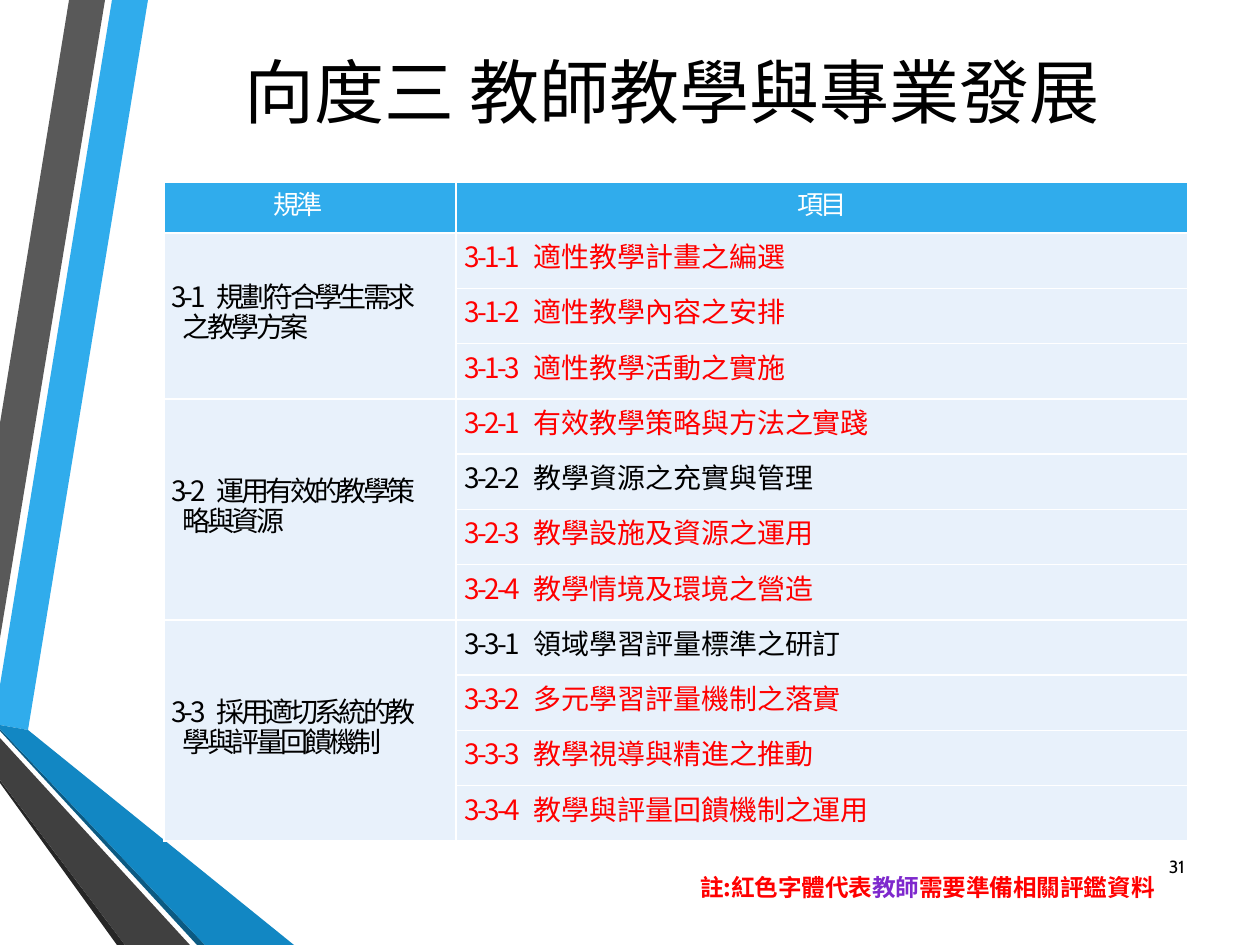
from typing import NamedTuple

from pptx import Presentation
from pptx.dml.color import RGBColor
from pptx.enum.text import MSO_ANCHOR as Anchor, PP_ALIGN as Align
from pptx.util import Emu, Pt

SCALE = 914400 / 126  # EMU per px
CJK = "Noto Sans CJK SC"
LATIN = "Cabin"
BLACK, WHITE, RED, PURPLE = "000000", "FFFFFF", "FF0000", "7E28CD"
HEADER_BLUE, PALE_BLUE = "30ACEC", "E8F1FB"
HEADER_HEIGHT, BODY_HEIGHT = 51, 608
ITEM_INDENT, CRITERION_INDENT, WRAP_INDENT = 69, 45, 11


class Band(NamedTuple):
    color: str
    points: list[tuple[int, int]]


class Item(NamedTuple):
    number: str
    text: str
    color: str = RED


class Criterion(NamedTuple):
    number: str
    lines: tuple[str, str]
    items: list[Item]


BANDS = [
    Band(HEADER_BLUE, [(0, 685), (0, 725), (28, 730), (148, 0), (112, 0)]),
    Band("595959", [(105, 0), (69, 0), (0, 423), (0, 638)]),
    Band("262626", [(0, 780), (0, 783), (117, 945), (125, 945)]),
    Band("0C5A82", [(0, 729), (0, 731), (197, 945), (205, 945)]),
    Band("1287C3", [(0, 729), (205, 945), (294, 945), (28, 730), (0, 725)]),
    Band("404040", [(0, 780), (125, 945), (190, 945), (0, 738)]),
]

CRITERIA = [
    Criterion("3-1", ("規劃符合學生需求", "之教學方案"), [
        Item("3-1-1", "適性教學計畫之編選"),
        Item("3-1-2", "適性教學內容之安排"),
        Item("3-1-3", "適性教學活動之實施"),
    ]),
    Criterion("3-2", ("運用有效的教學策", "略與資源"), [
        Item("3-2-1", "有效教學策略與方法之實踐"),
        Item("3-2-2", "教學資源之充實與管理", BLACK),
        Item("3-2-3", "教學設施及資源之運用"),
        Item("3-2-4", "教學情境及環境之營造"),
    ]),
    Criterion("3-3", ("採用適切系統的教", "學與評量回饋機制"), [
        Item("3-3-1", "領域學習評量標準之研訂", BLACK),
        Item("3-3-2", "多元學習評量機制之落實"),
        Item("3-3-3", "教學視導與精進之推動"),
        Item("3-3-4", "教學與評量回饋機制之運用"),
    ]),
]


def px(length: float) -> Emu:
    return Emu(round(length * SCALE))


def rgb(color: str) -> RGBColor:
    return RGBColor.from_string(color)


def set_attributes(target, values: dict) -> None:
    for name, value in values.items():
        setattr(target, name, value)


def add_run(paragraph, text: str, size: float, color: str, font: str = CJK,
            bold: bool = False, spacing: float = 0) -> None:
    """Add a run; spacing is the extra space between letters in points."""
    run = paragraph.add_run()
    run.text = text
    set_attributes(run.font, {"size": Pt(size), "name": font, "bold": bold})
    run.font.color.rgb = rgb(color)
    if spacing:
        run.font._element.set("spc", str(round(spacing * 100)))


def format_paragraph(paragraph, align: Align, left: int = 0, first: int = 0) -> None:
    set_attributes(paragraph, {"alignment": align, "line_spacing": Pt(17)})
    properties = paragraph._p.get_or_add_pPr()
    properties.set("marL", str(px(left)))
    properties.set("indent", str(px(first)))


def format_cell(cell, fill: str, side: int, edge: int) -> None:
    set_attributes(cell, {
        "vertical_anchor": Anchor.MIDDLE,
        "margin_left": px(side), "margin_right": px(side),
        "margin_top": px(edge), "margin_bottom": px(edge),
    })
    cell.fill.solid()
    cell.fill.fore_color.rgb = rgb(fill)


def add_band(slide, band: Band) -> None:
    builder = slide.shapes.build_freeform(*band.points[0], scale=SCALE)
    builder.add_line_segments(band.points[1:], close=True)
    shape = builder.convert_to_shape()
    shape.shadow.inherit = False
    shape.fill.solid()
    shape.fill.fore_color.rgb = rgb(band.color)
    shape.line.fill.background()


def add_label(slide, left: int, top: int, width: int, height: int, anchor: Anchor):
    """Add a right-aligned text box and return its paragraph."""
    box = slide.shapes.add_textbox(*map(px, (left, top, width, height)))
    set_attributes(box.text_frame, {"word_wrap": True, "vertical_anchor": anchor})
    paragraph = box.text_frame.paragraphs[0]
    paragraph.alignment = Align.RIGHT
    return paragraph


def set_title(slide, text: str) -> None:
    title = slide.shapes.title
    set_attributes(title, {"left": px(154), "top": px(0),
                           "width": px(1036), "height": px(181)})
    title.text_frame.vertical_anchor = Anchor.MIDDLE
    paragraph = title.text_frame.paragraphs[0]
    paragraph.alignment = Align.CENTER
    add_run(paragraph, text, 40, BLACK, LATIN)


def fill_header(cell, text: str) -> None:
    format_cell(cell, HEADER_BLUE, 9, 5)
    paragraph = cell.text_frame.paragraphs[0]
    format_paragraph(paragraph, Align.CENTER)
    add_run(paragraph, text, 15, WHITE, spacing=-2)


def fill_criterion(cell, criterion: Criterion) -> None:
    format_cell(cell, PALE_BLUE, 8, 0)
    first = cell.text_frame.paragraphs[0]
    format_paragraph(first, Align.LEFT, CRITERION_INDENT, -CRITERION_INDENT)
    second = cell.text_frame.add_paragraph()
    format_paragraph(second, Align.LEFT, WRAP_INDENT)
    add_run(first, f"{criterion.number}\t{criterion.lines[0]}", 16, BLACK, spacing=-2)
    add_run(second, criterion.lines[1], 16, BLACK, spacing=-2)


def fill_item(cell, item: Item) -> None:
    format_cell(cell, PALE_BLUE, 9, 5)
    paragraph = cell.text_frame.paragraphs[0]
    format_paragraph(paragraph, Align.JUSTIFY, ITEM_INDENT, -ITEM_INDENT)
    add_run(paragraph, f"{item.number}\t", 16, item.color, spacing=-1.5)
    add_run(paragraph, item.text, 16, item.color)


def add_criteria_table(slide) -> None:
    item_count = sum(len(criterion.items) for criterion in CRITERIA)
    frame = slide.shapes.add_table(item_count + 1, 2, px(164), px(182), px(1024),
                                   px(HEADER_HEIGHT + BODY_HEIGHT))
    table = frame.table
    table.horz_banding = False
    for column, width in zip(table.columns, (292, 732)):
        column.width = px(width)
    for row in table.rows:
        row.height = px(BODY_HEIGHT / item_count)
    table.rows[0].height = px(HEADER_HEIGHT)
    for column, text in enumerate(("規準", "項目")):
        fill_header(table.cell(0, column), text)
    table.cell(0, 0).margin_right = px(33)

    top = 1
    for criterion in CRITERIA:
        bottom = top + len(criterion.items) - 1
        table.cell(top, 0).merge(table.cell(bottom, 0))
        fill_criterion(table.cell(top, 0), criterion)
        for row, item in enumerate(criterion.items, top):
            fill_item(table.cell(row, 1), item)
        top = bottom + 1


def main() -> None:
    presentation = Presentation()
    set_attributes(presentation, {"slide_width": px(1260), "slide_height": px(945)})
    slide = presentation.slides.add_slide(presentation.slide_layouts[5])
    for band in BANDS:
        add_band(slide, band)
    set_title(slide, "向度三 教師教學與專業發展")
    add_run(add_label(slide, 1138, 842, 59, 50, Anchor.MIDDLE), "31", 10, BLACK, LATIN)
    add_criteria_table(slide)
    note = add_label(slide, 319, 867, 848, 42, Anchor.TOP)
    for text, color in (("註:紅色字體代表", RED), ("教師", PURPLE),
                        ("需要準備相關評鑑資料", RED)):
        add_run(note, text, 13.5, color, bold=True)
    presentation.save("out.pptx")


if __name__ == "__main__":
    main()
